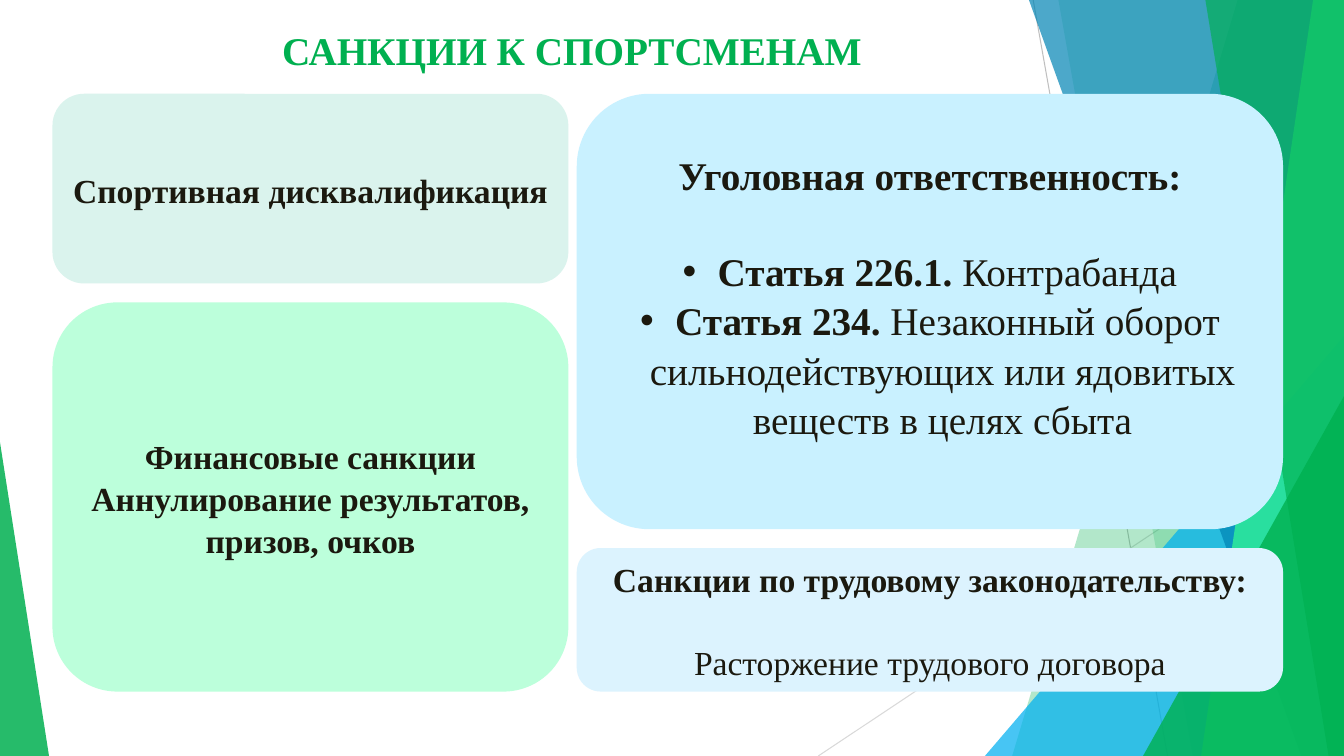
from lxml import etree
from pptx import Presentation
from pptx.dml.color import RGBColor
from pptx.enum.shapes import MSO_CONNECTOR, MSO_SHAPE
from pptx.enum.text import MSO_ANCHOR, PP_ALIGN
from pptx.oxml.ns import qn
from pptx.util import Pt

STRAIGHT = MSO_CONNECTOR.STRAIGHT
TRIANGLE = MSO_SHAPE.ISOSCELES_TRIANGLE
ROUNDED = MSO_SHAPE.ROUNDED_RECTANGLE
MIDDLE = MSO_ANCHOR.MIDDLE
LEFT, CENTER = PP_ALIGN.LEFT, PP_ALIGN.CENTER

GREEN = RGBColor(0x00, 0xB0, 0x50)
LIGHT_GREEN = RGBColor(0x37, 0xFF, 0x92)
BLUE = RGBColor(0x00, 0xB0, 0xF0)
DARK_BLUE = RGBColor(0x00, 0x84, 0xB4)
GREY = RGBColor(0xBF, 0xBF, 0xBF)
PALE_GREY = RGBColor(0xD9, 0xD9, 0xD9)
INK = RGBColor(0x1B, 0x19, 0x0F)
MINT = RGBColor(0xDA, 0xF3, 0xED)
PALE_GREEN = RGBColor(0xBC, 0xFF, 0xDB)
SKY = RGBColor(0xC9, 0xF1, 0xFF)
PALE_SKY = RGBColor(0xDC, 0xF3, 0xFE)

FONT = "Times New Roman"
WIDTH, HEIGHT = 960, 540
LEFT_X, LEFT_W = 37.5, 368.5
RIGHT_X, RIGHT_W = 412, 504.5
TOP, BOTTOM, GAP = 67, 494, 13.5
BULLET_INDENT = 18


def paint(sp, color, opacity=100):
    """Give a shape a plain fill, without line or shadow."""
    sp.shadow.inherit = False
    sp.line.fill.background()
    sp.fill.solid()
    sp.fill.fore_color.rgb = color
    if opacity < 100:
        clr = sp.fill._xPr.find(qn("a:solidFill"))[0]
        etree.SubElement(clr, qn("a:alpha")).set("val", str(opacity * 1000))


def add_line(s, start, end, color):
    """Draw a thin straight line."""
    line = s.shapes.add_connector(STRAIGHT, *map(Pt, start + end))
    line.line.color.rgb = color
    line.line.width = Pt(0.75)
    etree.SubElement(line._element.spPr, qn("a:effectLst"))


def add_band(s, top_x, bottom_x, color, opacity):
    """Draw a full-height band from a slanted edge to the right slide edge."""
    builder = s.shapes.build_freeform(Pt(top_x), 0)
    corners = [(WIDTH, 0), (WIDTH, HEIGHT), (bottom_x, HEIGHT)]
    builder.add_line_segments([(Pt(x), Pt(y)) for x, y in corners])
    paint(builder.convert_to_shape(), color, opacity)


def add_wedge(s, x, y, w, apex, color, opacity):
    """Draw a right triangle that stands on the bottom slide edge."""
    sp = s.shapes.add_shape(TRIANGLE, Pt(x), Pt(y), Pt(w), Pt(HEIGHT - y))
    sp.adjustments[0] = apex
    paint(sp, color, opacity)


def add_paragraph(p, runs, size, color=INK, align=CENTER, before=0, bullet=False):
    """Fill a paragraph with (text, bold) runs."""
    p.alignment = align
    p.line_spacing = 1.05
    if before:
        p.space_before = Pt(before)
    if bullet:
        pPr = p._p.get_or_add_pPr()
        pPr.set("marL", str(Pt(BULLET_INDENT)))
        pPr.set("indent", str(-Pt(BULLET_INDENT)))
        etree.SubElement(pPr, qn("a:buFont")).set("typeface", "Arial")
        etree.SubElement(pPr, qn("a:buChar")).set("char", "•")
    for text, bold in runs:
        r = p.add_run()
        r.text = text
        r.font.name = FONT
        r.font.size = Pt(size)
        r.font.bold = bold
        r.font.color.rgb = color


def add_title(s, text):
    """Add the slide title."""
    tf = s.shapes.add_textbox(Pt(194.5), Pt(10), Pt(799), Pt(49)).text_frame
    tf.word_wrap = True
    tf.vertical_anchor = MIDDLE
    add_paragraph(tf.paragraphs[0], [(text, True)], 28, GREEN, LEFT)


def add_card(s, x, y, w, h, color, size, paragraphs, bottom=3.6):
    """Add a rounded card with (runs, space before, bullet) paragraphs."""
    sp = s.shapes.add_shape(ROUNDED, Pt(x), Pt(y), Pt(w), Pt(h))
    paint(sp, color)
    tf = sp.text_frame
    tf.word_wrap = True
    tf.vertical_anchor = MIDDLE
    tf.margin_bottom = Pt(bottom)
    for i, (runs, before, bullet) in enumerate(paragraphs):
        p = tf.add_paragraph() if i else tf.paragraphs[0]
        add_paragraph(p, runs, size, before=before, bullet=bullet)


def add_backdrop(s):
    """Draw the lines, bands and wedges behind the content."""
    add_line(s, (738, 0), (834, HEIGHT), GREY)
    add_line(s, (WIDTH, 290), (584.5, HEIGHT), PALE_GREY)
    add_band(s, 884, 723, GREEN, 30)
    add_band(s, 756, 852, GREEN, 20)
    add_wedge(s, 703.5, 240, 256.5, 1, BLUE, 72)
    add_band(s, 735, 929.5, DARK_BLUE, 70)
    add_band(s, 938, 858, LIGHT_GREEN, 70)
    add_band(s, 861, 949, GREEN, 65)
    add_wedge(s, 816.5, 283, 143.5, 1, GREEN, 80)
    add_wedge(s, 0, 316, 35, 0, GREEN, 85)


def main():
    """Build the slide and save it."""
    prs = Presentation()
    prs.slide_width, prs.slide_height = Pt(WIDTH), Pt(HEIGHT)
    s = prs.slides.add_slide(prs.slide_layouts[6])
    add_backdrop(s)
    add_title(s, "САНКЦИИ К СПОРТСМЕНАМ")

    sport_h, criminal_h = 135.5, 311
    finance_y = TOP + sport_h + GAP
    labour_y = TOP + criminal_h + GAP
    add_card(s, LEFT_X, TOP, LEFT_W, sport_h, MINT, 24, [
        ([("Спортивная дисквалификация", True)], 0, False),
    ])
    add_card(s, RIGHT_X, TOP, RIGHT_W, criminal_h, SKY, 28, [
        ([("Уголовная ответственность:", True)], 0, False),
        ([(" ", False), ("Статья 226.1. ", True), ("Контрабанда", False)], 33, True),
        ([(" Статья 234. ", True),
          ("Незаконный оборот сильнодействующих или ядовитых "
           "веществ в целях сбыта", False)], 0, True),
    ], bottom=26)
    add_card(s, LEFT_X, finance_y, LEFT_W, BOTTOM - finance_y, PALE_GREEN, 24, [
        ([("Финансовые санкции", True)], 0, False),
        ([("Аннулирование результатов, призов, очков", True)], 0, False),
    ])
    add_card(s, RIGHT_X, labour_y, RIGHT_W, BOTTOM - labour_y, PALE_SKY, 24, [
        ([("Санкции по трудовому законодательству:", True)], 0, False),
        ([("Расторжение трудового договора", False)], 29, False),
    ])
    prs.save("out.pptx")


if __name__ == "__main__":
    main()
